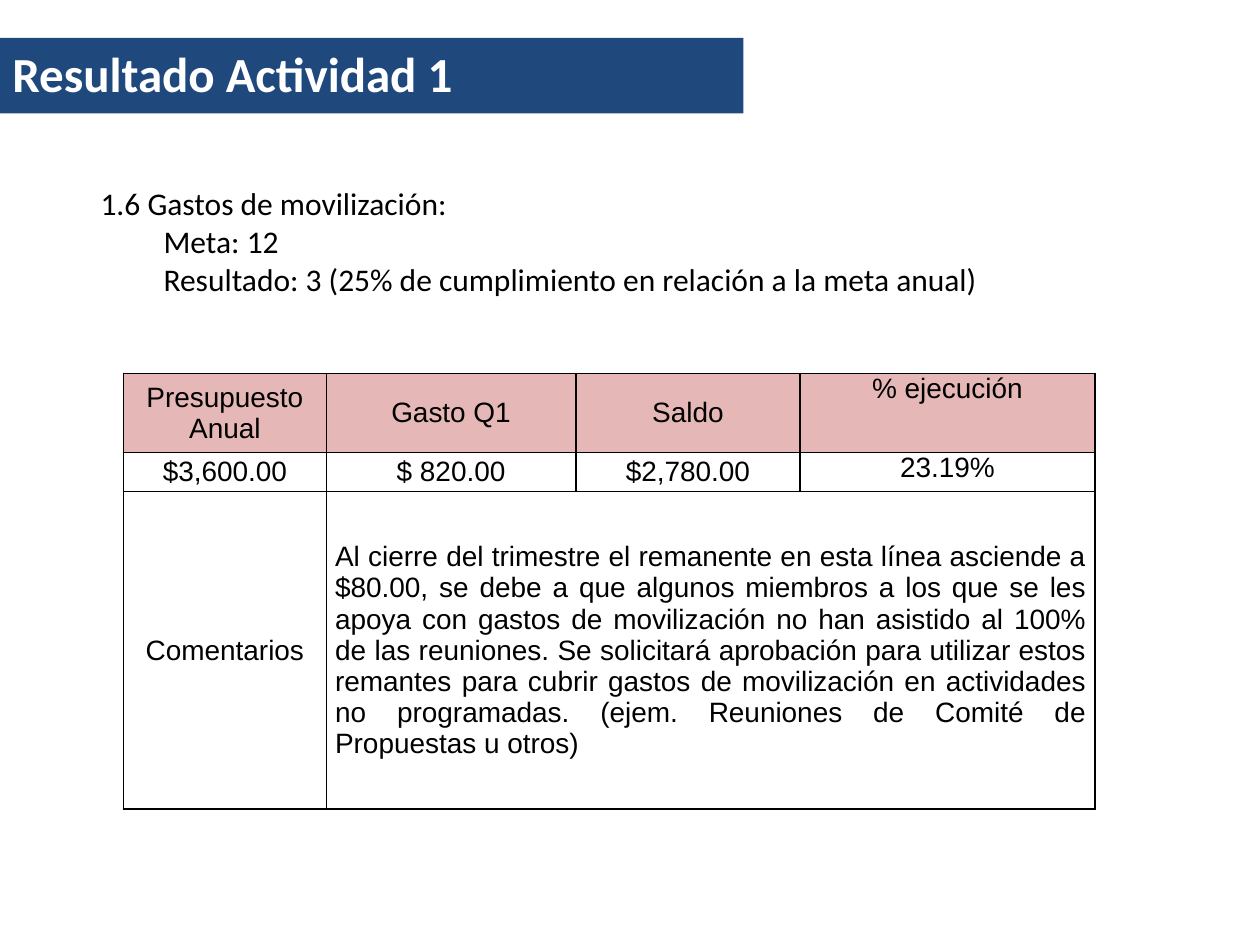
from lxml.etree import SubElement
from pptx import Presentation
from pptx.dml.color import RGBColor
from pptx.enum.shapes import MSO_SHAPE
from pptx.enum.text import MSO_ANCHOR, PP_ALIGN
from pptx.oxml.ns import qn
from pptx.util import Inches, Pt

COLORS = {"navy": "1F497D", "rose": "E5B8B7", "black": "000000", "white": "FFFFFF"}
WIDTH, HEIGHT = 10, 7.5


def rgb(name):
    return RGBColor.from_string(COLORS[name])


def write(p, text, size=18, font="Calibri", color="black", bold=False,
          align=PP_ALIGN.LEFT, indent=0):
    """Put one formatted run in a paragraph."""
    p.alignment = align
    if indent:
        pPr = p._p.get_or_add_pPr()
        pPr.set("marL", str(Inches(indent)))
        pPr.set("indent", "0")
    r = p.add_run()
    r.text = text
    r.font.size, r.font.name, r.font.bold = Pt(size), font, bold
    r.font.color.rgb = rgb(color)


class Deck:
    """Slide style; boxes are shares of the slide's width and height."""

    def __init__(self):
        self.prs = Presentation()
        self.prs.slide_width, self.prs.slide_height = Inches(WIDTH), Inches(HEIGHT)
        self.s = self.prs.slides.add_slide(self.prs.slide_layouts[6])

    def box(self, x, y, w, h):
        return (Inches(x * WIDTH), Inches(y * HEIGHT),
                Inches(w * WIDTH), Inches(h * HEIGHT))

    def banner(self, text, *share):
        sp = self.s.shapes.add_shape(MSO_SHAPE.RECTANGLE, *self.box(*share))
        sp.shadow.inherit = False
        sp.fill.solid()
        sp.fill.fore_color.rgb = rgb("navy")
        sp.line.fill.background()
        tf = sp.text_frame
        tf.vertical_anchor = MSO_ANCHOR.TOP
        write(tf.paragraphs[0], text, size=28, color="white", bold=True)

    def text(self, lines, *share):
        tf = self.s.shapes.add_textbox(*self.box(*share)).text_frame
        tf.word_wrap = True
        tf.vertical_anchor = MSO_ANCHOR.MIDDLE
        for i, (line, indent) in enumerate(lines):
            p = tf.add_paragraph() if i else tf.paragraphs[0]
            write(p, line, indent=indent)

    def table(self, rows, widths, heights, *share):
        frame = self.s.shapes.add_table(len(rows), len(widths), *self.box(*share))
        table = frame.table
        for col, width in zip(table.columns, widths):
            col.width = Inches(width)
        for row, height in zip(table.rows, heights):
            row.height = Inches(height)
        last, end = len(rows) - 1, len(widths) - 1
        table.cell(last, 1).merge(table.cell(last, end))
        for i in range(len(rows)):
            for j in range(len(widths)):
                cell = table.cell(i, j)
                self.borders(cell)
                if i == 0:
                    cell.fill.solid()
                    cell.fill.fore_color.rgb = rgb("rose")
                else:
                    cell.fill.background()
                if cell.is_spanned:
                    continue
                cell.margin_left = cell.margin_right = Inches(0.07)
                cell.margin_top = cell.margin_bottom = 0
                cell.vertical_anchor = MSO_ANCHOR.TOP if j == end else MSO_ANCHOR.MIDDLE
                align = PP_ALIGN.JUSTIFY if cell.is_merge_origin else PP_ALIGN.CENTER
                write(cell.text_frame.paragraphs[0], rows[i][j],
                      size=16, font="Arial", align=align)

    def borders(self, cell):
        # Lines come before the fill in the cell properties
        tcPr = cell._tc.get_or_add_tcPr()
        for side in ("a:lnL", "a:lnR", "a:lnT", "a:lnB"):
            ln = SubElement(tcPr, qn(side), w=str(Pt(1)))
            fill = SubElement(ln, qn("a:solidFill"))
            SubElement(fill, qn("a:srgbClr"), val=COLORS["black"])


def main():
    deck = Deck()

    # Title banner
    deck.banner("Resultado Actividad 1", 0, 0.04, 0.59, 0.08)

    # Goal and result
    deck.text([
        ("1.6 Gastos de movilización:", 0.5),
        ("Meta: 12", 1),
        ("Resultado: 3 (25% de cumplimiento en relación a la meta anual)", 1),
    ], 0.02, 0.19, 0.94, 0.13)

    # Budget table with comments
    comment = (
        "Al cierre del trimestre el remanente en esta línea asciende a $80.00, "
        "se debe a que algunos miembros a los que se les apoya con gastos de "
        "movilización no han asistido al 100% de las reuniones. Se solicitará "
        "aprobación para utilizar estos remantes para cubrir gastos de "
        "movilización en actividades no programadas. (ejem. Reuniones de Comité "
        "de Propuestas u otros)")
    deck.table([
        ("Presupuesto Anual", "Gasto Q1", "Saldo", "% ejecución"),
        ("$3,600.00", "$ 820.00", "$2,780.00", "23.19%"),
        ("Comentarios", comment),
    ], (1.61, 1.98, 1.78, 2.34), (0.63, 0.31, 2.52), 0.098, 0.395, 0.77, 0.46)

    deck.prs.save("out.pptx")


if __name__ == "__main__":
    main()
